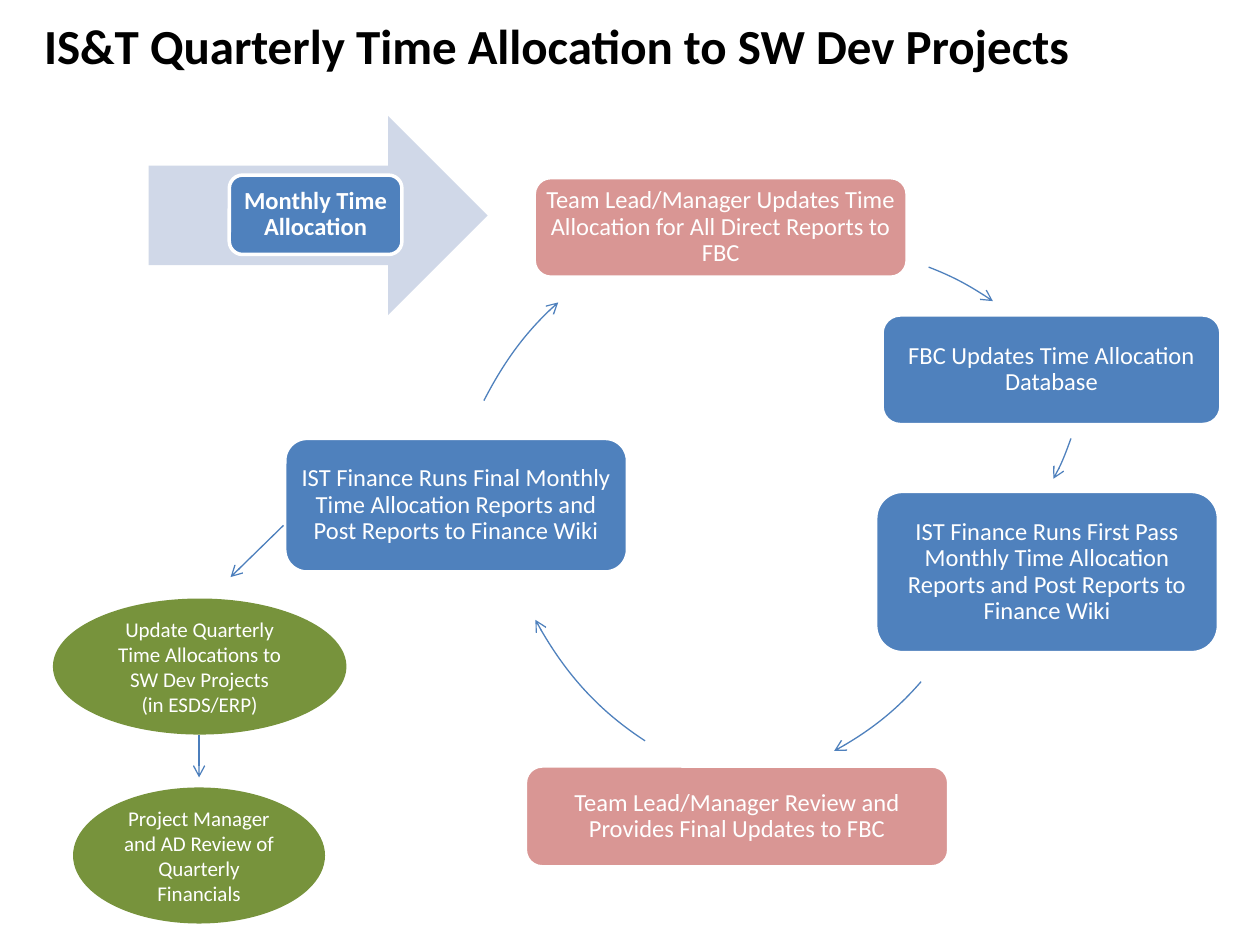
"""Build the slide on quarterly time allocation to software projects."""
from dataclasses import dataclass

from lxml.etree import SubElement
from pptx import Presentation
from pptx.dml.color import RGBColor
from pptx.enum.shapes import MSO_CONNECTOR, MSO_SHAPE
from pptx.enum.text import MSO_ANCHOR, MSO_AUTO_SIZE, PP_ALIGN
from pptx.oxml.ns import qn
from pptx.util import Inches, Pt

COLUMNS, ROWS = 100, 75
CELL = Inches(10) // COLUMNS
FONT = "Calibri"
COLORS = {
    "black": "000000",
    "white": "FFFFFF",
    "blue": "4F81BD",
    "pink": "D99694",
    "green": "77933C",
    "pale": "D0D8E8",
    "link": "4B7EBC",
}


@dataclass
class Box:
    """A filled shape placed in columns and rows, one text per paragraph."""

    left: float
    top: float
    width: float
    height: float
    color: str
    texts: tuple[str, ...] = ()
    bold: bool = False


@dataclass
class Curve:
    """A curved arrow given by its start, two control points and end."""

    points: tuple[tuple[float, float], ...]


@dataclass
class Link:
    """A straight arrow between two points."""

    start: tuple[float, float]
    end: tuple[float, float]


CYCLE_ARROW = Box(11.8, 9.2, 26.9, 15.8, "pale")
STEPS = [
    Box(42.4, 14.1, 29.6, 7.9, "pink",
        ("Team Lead/Manager Updates Time Allocation for All Direct Reports to FBC",)),
    Box(70, 25, 26.9, 8.7, "blue", ("FBC Updates Time Allocation Database",)),
    Box(69.5, 39, 27.2, 12.8, "blue",
        ("IST Finance Runs First Pass Monthly Time Allocation Reports "
         "and Post Reports to Finance Wiki",)),
    Box(41.7, 60.8, 33.6, 8, "pink",
        ("Team Lead/Manager Review and Provides Final Updates to FBC",)),
    Box(22.6, 34.8, 27.2, 10.6, "blue",
        ("IST Finance Runs Final Monthly Time Allocation Reports "
         "and Post Reports to Finance Wiki",)),
    Box(18.2, 13.9, 13.7, 6.3, "blue", ("Monthly Time Allocation",), True),
]
OUTCOMES = [
    Box(4.2, 47.5, 23.3, 10.8, "green",
        ("Update Quarterly Time Allocations to SW Dev Projects", "(in ESDS/ERP)")),
    Box(5.8, 62.5, 20, 10.8, "green",
        ("Project Manager and AD Review of Quarterly Financials",)),
]
CURVES = [
    Curve(((73.7, 21.2), (75.5, 21.9), (77.2, 22.8), (78.8, 23.9))),
    Curve(((85, 34.8), (84.6, 35.9), (84.2, 37), (83.6, 38))),
    Curve(((73.1, 54.1), (71.2, 56.3), (68.8, 58.2), (66.2, 59.6))),
    Curve(((51.2, 58.8), (47.5, 56.4), (44.6, 53.1), (42.5, 49.2))),
    Curve(((38.4, 31.8), (39.9, 28.9), (41.8, 26.2), (44.3, 24))),
]
LINKS = [
    Link((22.5, 41.7), (18.3, 45.8)),
    Link((15.8, 58.3), (15.8, 61.7)),
]


def cells(*counts: float) -> list[int]:
    """Turn counts of grid cells into lengths."""
    return [round(count * CELL) for count in counts]


def add_run(paragraph, text: str, size: float, color: str, bold: bool) -> None:
    """Add one formatted run to a paragraph."""
    run = paragraph.add_run()
    run.text = text
    run.font.name = FONT
    run.font.size = Pt(size)
    run.font.bold = bold
    run.font.color.rgb = RGBColor.from_string(COLORS[color])


def add_title(slide, text: str) -> None:
    """Place and format the title placeholder."""
    title = slide.shapes.title
    title.left, title.top, title.width, title.height = cells(2.5, 1.7, 90, 3.7)
    frame = title.text_frame
    frame.auto_size = MSO_AUTO_SIZE.NONE
    frame.vertical_anchor = MSO_ANCHOR.MIDDLE
    paragraph = frame.paragraphs[0]
    paragraph.alignment = PP_ALIGN.LEFT
    add_run(paragraph, text, 28, "black", True)


def add_box(slide, box: Box, kind: MSO_SHAPE, size: float = 14,
            spacing: float = 1.0, outlined: bool = False,
            inset: float | None = None) -> None:
    """Draw a filled shape with its centred text."""
    shape = slide.shapes.add_shape(
        kind, *cells(box.left, box.top, box.width, box.height))
    shape.shadow.inherit = False
    shape.fill.solid()
    shape.fill.fore_color.rgb = RGBColor.from_string(COLORS[box.color])
    if outlined:
        shape.line.color.rgb = RGBColor.from_string(COLORS["white"])
        shape.line.width = Pt(2)
    else:
        shape.line.fill.background()
    frame = shape.text_frame
    frame.word_wrap = True
    frame.vertical_anchor = MSO_ANCHOR.MIDDLE
    if inset is not None:
        frame.margin_left = frame.margin_right = Inches(inset)
        frame.margin_top = frame.margin_bottom = Inches(inset)
    for index, text in enumerate(box.texts):
        paragraph = frame.add_paragraph() if index else frame.paragraphs[0]
        paragraph.alignment = PP_ALIGN.CENTER
        paragraph.line_spacing = spacing
        add_run(paragraph, text, size, "white", box.bold)


def style_arrow(shape, color: str) -> None:
    """Give a line its colour, width and open arrowhead."""
    shape.line.color.rgb = RGBColor.from_string(COLORS[color])
    shape.line.width = Pt(0.75)
    SubElement(shape.line._get_or_add_ln(), qn("a:tailEnd"), type="arrow")


def add_curve(slide, curve: Curve) -> None:
    """Draw a curved arrow as one cubic segment."""
    start, *others = [tuple(cells(*point)) for point in curve.points]
    builder = slide.shapes.build_freeform(*start)
    builder.add_line_segments(others, close=False)
    shape = builder.convert_to_shape()
    path = next(shape._element.iter(qn("a:path")))
    segments = path.findall(qn("a:lnTo"))
    cubic = SubElement(path, qn("a:cubicBezTo"))
    for segment in segments:
        cubic.append(segment[0])
        path.remove(segment)
    shape.shadow.inherit = False
    shape.fill.background()
    style_arrow(shape, "blue")


def add_link(slide, link: Link) -> None:
    """Draw a straight arrow."""
    connector = slide.shapes.add_connector(
        MSO_CONNECTOR.STRAIGHT, *cells(*link.start, *link.end))
    style_arrow(connector, "link")
    SubElement(connector._element.spPr, qn("a:effectLst"))


def main() -> None:
    """Build and save the presentation."""
    presentation = Presentation()
    presentation.slide_width, presentation.slide_height = cells(COLUMNS, ROWS)
    slide = presentation.slides.add_slide(presentation.slide_layouts[5])
    add_title(slide, "IS&T Quarterly Time Allocation to SW Dev Projects")
    add_box(slide, CYCLE_ARROW, MSO_SHAPE.RIGHT_ARROW)
    for step in STEPS:
        add_box(slide, step, MSO_SHAPE.ROUNDED_RECTANGLE,
                spacing=0.9, outlined=True, inset=0.02)
    for curve in CURVES:
        add_curve(slide, curve)
    for outcome in OUTCOMES:
        add_box(slide, outcome, MSO_SHAPE.OVAL, size=12)
    for link in LINKS:
        add_link(slide, link)
    presentation.save("out.pptx")


if __name__ == "__main__":
    main()
